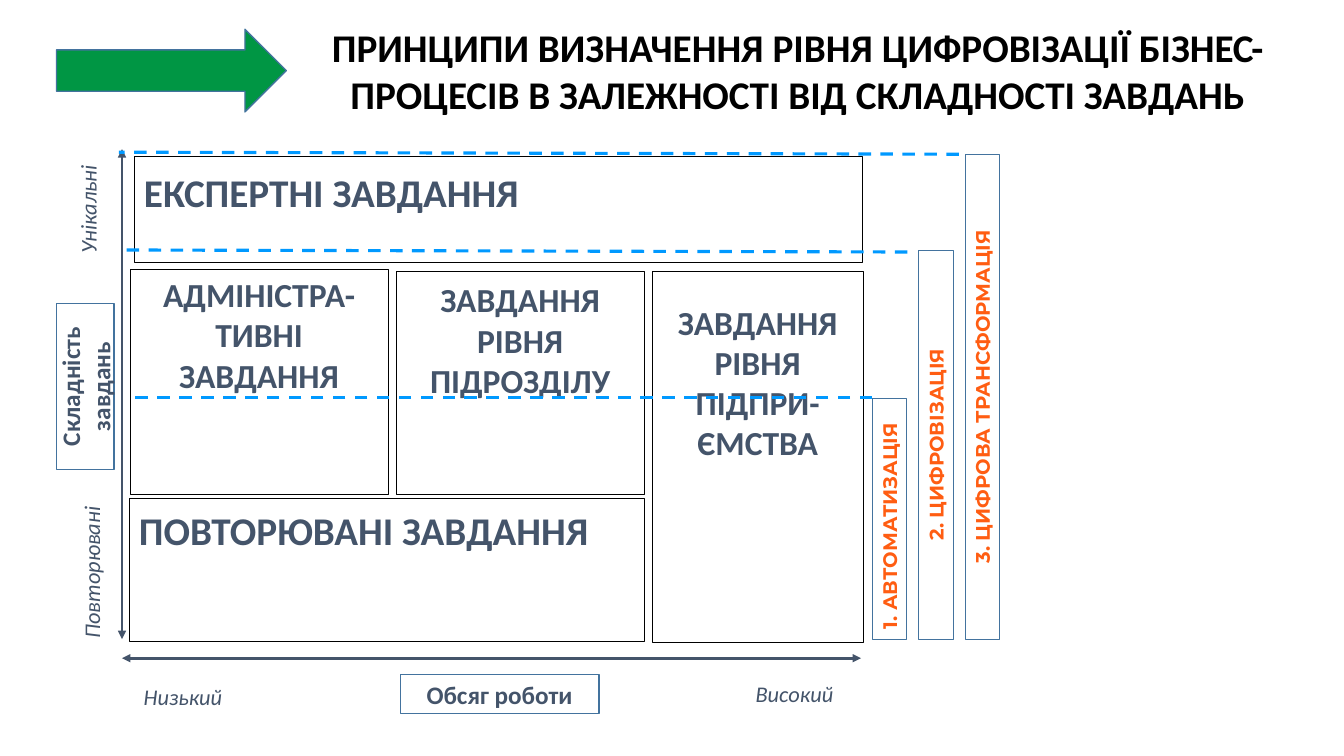
import dataclasses

import lxml.etree
import pptx
import pptx.dml.color
import pptx.enum.dml
import pptx.enum.shapes
import pptx.enum.text
import pptx.oxml.ns
import pptx.util

ALIGN = pptx.enum.text.PP_ALIGN
ANCHOR = pptx.enum.text.MSO_ANCHOR
SHAPE = pptx.enum.shapes.MSO_SHAPE


@dataclasses.dataclass(frozen=True)
class Theme:
    font: str = "Calibri"
    bar_font: str = "Montserrat"
    black: str = "000000"
    white: str = "FFFFFF"
    ink: str = "44546A"
    border: str = "43739E"
    green: str = "009644"
    orange: str = "FF5D12"
    level: str = "0099FF"
    title_size: int = 28
    card_size: int = 24
    axis_size: int = 18
    label_size: int = 16
    bar_size: int = 14


def color(value):
    return pptx.dml.color.RGBColor.from_string(value)


class SlideBuilder:
    """Places elements on a grid of 133.3 columns by 75 rows."""

    columns, rows = 133.3, 75

    def __init__(self, presentation, theme):
        self.theme = theme
        self.column = presentation.slide_width / self.columns
        self.row = presentation.slide_height / self.rows
        self.slide = presentation.slides.add_slide(presentation.slide_layouts[5])

    def x(self, columns):
        return round(columns * self.column)

    def y(self, rows):
        return round(rows * self.row)

    def set_text(self, shape, text, size, ink, font=None, bold=True, italic=False,
                 align=ALIGN.CENTER, anchor=ANCHOR.MIDDLE):
        frame = shape.text_frame
        frame.text = text
        frame.word_wrap = True
        frame.auto_size = pptx.enum.text.MSO_AUTO_SIZE.NONE
        frame.vertical_anchor = anchor
        for paragraph in frame.paragraphs:
            paragraph.alignment = align
            for run in paragraph.runs:
                run.font.name = font or self.theme.font
                run.font.size = pptx.util.Pt(size)
                run.font.bold = bold
                run.font.italic = italic
                run.font.color.rgb = color(ink)

    def title(self, text, left, top, width, height):
        shape = self.slide.shapes.title
        shape.left, shape.top = self.x(left), self.y(top)
        shape.width, shape.height = self.x(width), self.y(height)
        self.set_text(shape, text, self.theme.title_size, self.theme.black)

    def box(self, left, top, width, height, border=None, weight=1.0,
            fill=None, kind=SHAPE.RECTANGLE, upright=False):
        """Draws a shape over the given area; upright ones read bottom to top."""
        across, down = self.x(width), self.y(height)
        start, head = self.x(left), self.y(top)
        if upright:
            start += (across - down) // 2
            head += (down - across) // 2
            across, down = down, across
        shape = self.slide.shapes.add_shape(kind, start, head, across, down)
        shape.rotation = 270 if upright else 0
        shape.shadow.inherit = False
        shape.fill.solid()
        shape.fill.fore_color.rgb = color(fill or self.theme.white)
        if border:
            shape.line.color.rgb = color(border)
            shape.line.width = pptx.util.Pt(weight)
        else:
            shape.line.fill.background()
        return shape

    def axis_name(self, text, area, upright=False):
        shape = self.box(*area, border=self.theme.border, upright=upright)
        self.set_text(shape, text, self.theme.axis_size, self.theme.ink)

    def axis_end(self, text, area, upright=False):
        shape = self.box(*area, upright=upright)
        self.set_text(shape, text, self.theme.label_size, self.theme.ink,
                      bold=False, italic=True)

    def card(self, text, area, inset, size, align):
        shape = self.box(*area, border=self.theme.black, weight=0.75)
        shape.text_frame.margin_top = self.y(inset)
        self.set_text(shape, text, size, self.theme.ink, align=align, anchor=ANCHOR.TOP)

    def bar(self, text, area, align):
        shape = self.box(*area, border=self.theme.border, weight=0.75, upright=True)
        self.set_text(shape, text, self.theme.bar_size, self.theme.orange,
                      font=self.theme.bar_font, align=align, anchor=ANCHOR.TOP)

    def line(self, start, end, ink, weight, dashed=False, arrows=False):
        connector = self.slide.shapes.add_connector(
            pptx.enum.shapes.MSO_CONNECTOR.STRAIGHT,
            self.x(start[0]), self.y(start[1]), self.x(end[0]), self.y(end[1]))
        connector.line.color.rgb = color(ink)
        connector.line.width = pptx.util.Pt(weight)
        if dashed:
            connector.line.dash_style = pptx.enum.dml.MSO_LINE.DASH
        properties = connector._element.spPr
        if arrows:
            outline = properties.find(pptx.oxml.ns.qn("a:ln"))
            for tag in ("a:headEnd", "a:tailEnd"):
                lxml.etree.SubElement(outline, pptx.oxml.ns.qn(tag), type="triangle")
        lxml.etree.SubElement(properties, pptx.oxml.ns.qn("a:effectLst"))


def main():
    presentation = pptx.Presentation()
    presentation.slide_width = pptx.util.Inches(13.33)
    presentation.slide_height = pptx.util.Inches(7.5)
    theme = Theme()
    builder = SlideBuilder(presentation, theme)

    # Heading
    builder.title("ПРИНЦИПИ ВИЗНАЧЕННЯ РІВНЯ ЦИФРОВІЗАЦІЇ БІЗНЕС-ПРОЦЕСІВ "
                  "В ЗАЛЕЖНОСТІ ВІД СКЛАДНОСТІ ЗАВДАНЬ", 28.4, 1.3, 101.4, 11.4)
    builder.box(5.6, 2.9, 22.8, 8.2, border=theme.border, fill=theme.green,
                kind=SHAPE.RIGHT_ARROW)

    # Axes: amount of work across, task complexity upwards
    origin, floor = 12.1, 63.4
    builder.line((origin, 65.3), (85.4, 65.3), theme.ink, 2, arrows=True)
    builder.axis_name("Обсяг роботи", (39.7, 66.9, 19.7, 3.9))
    builder.axis_end("Низький", (origin, 67.2, 12.1, 3.9))
    builder.axis_end("Високий", (72.1, 66.9, 13.4, 3.9))
    builder.line((origin, floor), (origin, 14.8), theme.ink, 2, arrows=True)
    builder.axis_name("Складність\nзавдань", (5.6, 30.1, 5.7, 16.5), upright=True)
    builder.axis_end("Повторювані", (7.15, 48.35, 3.8, 16.9), upright=True)
    builder.axis_end("Унікальні", (6.75, 14.35, 3.9, 12.8), upright=True)

    # Task cards: text, area, space above the text
    wide_cards = [
        ("ЕКСПЕРТНІ ЗАВДАННЯ", (13.3, 15.5, 72.3, 10.5), 1.2),
        ("ПОВТОРЮВАНІ ЗАВДАННЯ", (12.8, 49.5, 51.1, 14.1), 0.7),
    ]
    level_cards = [
        ("АДМІНІСТРА-\nТИВНІ\nЗАВДАННЯ", (12.9, 26.7, 25.6, 22.4), 0.5),
        ("ЗАВДАННЯ\nРІВНЯ\nПІДРОЗДІЛУ", (39.3, 26.9, 24.6, 22.2), 0.8),
        ("ЗАВДАННЯ\nРІВНЯ\nПІДПРИ-\nЄМСТВА", (64.7, 26.9, 20.9, 36.8), 3.0),
    ]
    for text, area, inset in wide_cards:
        builder.card(text, area, inset, theme.title_size, ALIGN.LEFT)
    for text, area, inset in level_cards:
        builder.card(text, area, inset, theme.card_size, ALIGN.CENTER)

    # Digitalization stages: each bar rises from the floor to its dashed level
    bar_left, bar_step, bar_width = 86.55, 4.6, 3.4
    stages = [
        ("1. АВТОМАТИЗАЦІЯ", 39.5, ALIGN.LEFT, (13.3, 39.4), (86.5, 39.4)),
        ("2. ЦИФРОВІЗАЦІЯ", 24.8, ALIGN.CENTER, (12.1, 24.8), (90, 25)),
        ("3. ЦИФРОВА ТРАНСФОРМАЦІЯ", 15.3, ALIGN.CENTER, (11.8, 15.1), (95.1, 15.3)),
    ]
    for index, (text, top, align, start, end) in enumerate(stages):
        left = bar_left + index * bar_step
        builder.bar(text, (left, top, bar_width, floor - top), align)
        builder.line(end, start, theme.level, 2.25, dashed=True)

    presentation.save("out.pptx")


if __name__ == "__main__":
    main()
